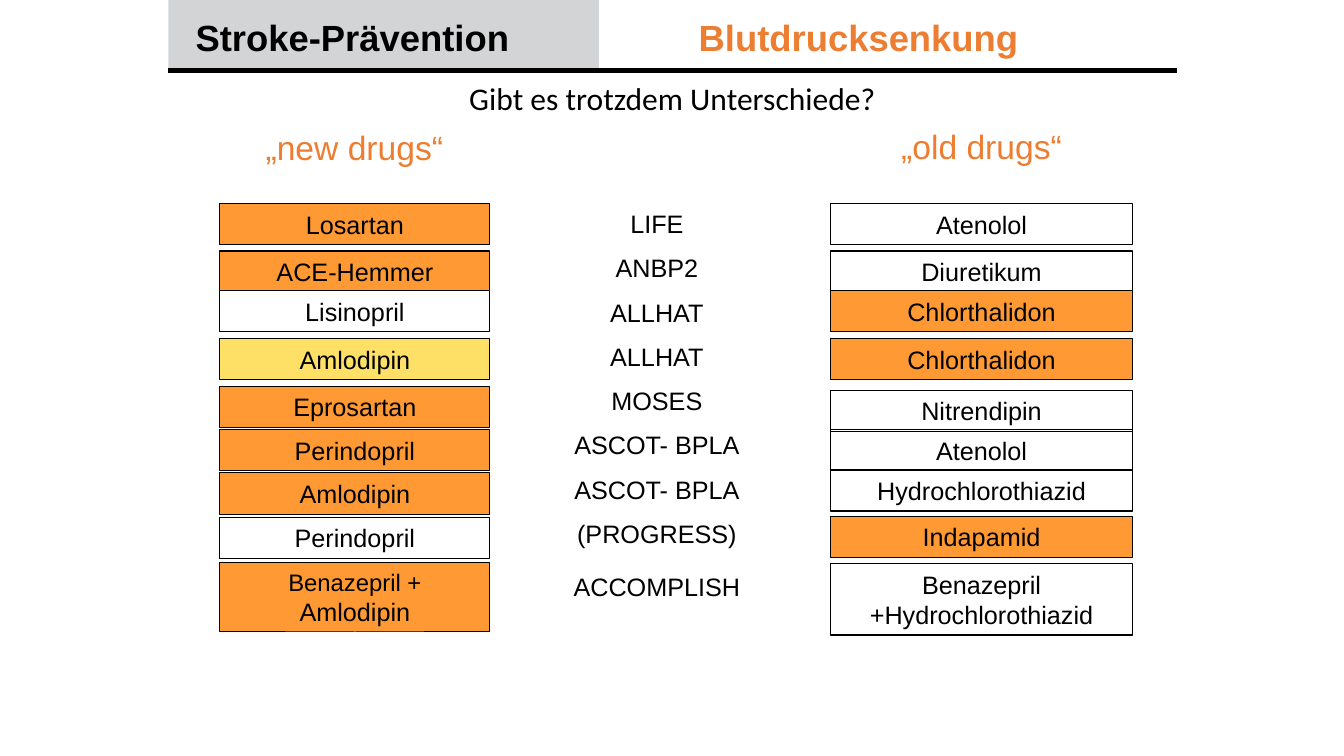
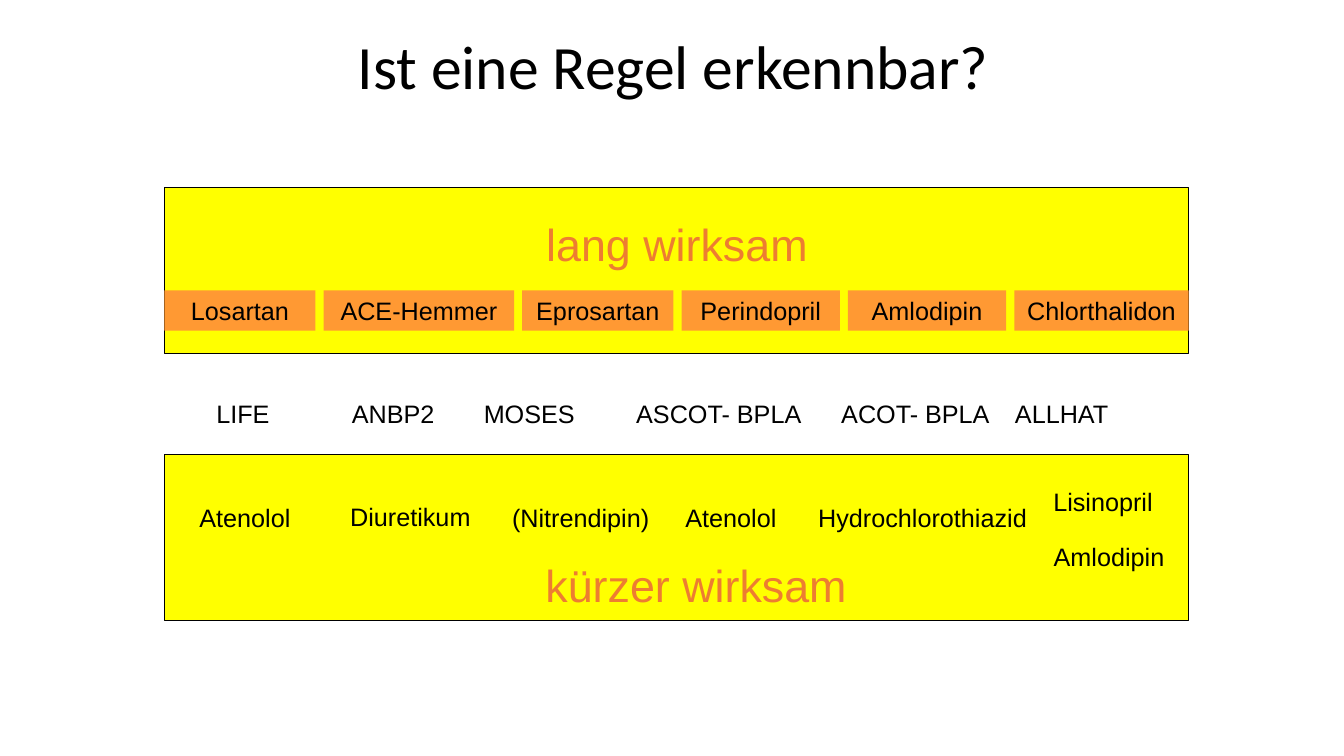
from dataclasses import dataclass
from lxml.etree import SubElement
from pptx import Presentation
from pptx.dml.color import RGBColor
from pptx.enum.shapes import MSO_CONNECTOR, MSO_SHAPE
from pptx.enum.text import MSO_ANCHOR, MSO_AUTO_SIZE, PP_ALIGN
from pptx.oxml.ns import qn
from pptx.util import Inches, Pt


@dataclass(frozen=True)
class Theme:
    black: RGBColor = RGBColor.from_string("000000")
    white: RGBColor = RGBColor.from_string("FFFFFF")
    accent: RGBColor = RGBColor.from_string("ED7D31")
    orange: RGBColor = RGBColor.from_string("FF9933")
    pale: RGBColor = RGBColor.from_string("FFE066")
    yellow: RGBColor = RGBColor.from_string("FFFF00")
    grey: RGBColor = RGBColor.from_string("D3D4D5")
    title_font: str = "Calibri"
    body_font: str = "Arial"
    body: float = 18
    tight: float = 17
    subtitle: float = 22.5
    group: float = 24
    header: float = 26
    band: float = 32
    title: float = 44


T = Theme()


def add_title(s, text, x, y, w, h, size):
    sp = s.shapes.title
    sp.left, sp.top, sp.width, sp.height = map(Inches, (x, y, w, h))
    tf = sp.text_frame
    tf.text = text
    tf.auto_size = MSO_AUTO_SIZE.NONE
    tf.vertical_anchor = MSO_ANCHOR.MIDDLE
    p = tf.paragraphs[0]
    p.alignment = PP_ALIGN.CENTER
    p.line_spacing = 0.9
    f = p.runs[0].font
    f.name, f.size, f.color.rgb = T.title_font, Pt(size), T.black


def add_box(s, text, x, y, w, h, fill=None, line=False, size=T.body, color=T.black):
    area = [Inches(v) for v in (x, y, w, h)]
    if fill or line:
        sp = s.shapes.add_shape(MSO_SHAPE.RECTANGLE, *area)
        sp.shadow.inherit = False
        if fill:
            sp.fill.solid()
            sp.fill.fore_color.rgb = fill
        else:
            sp.fill.background()
        if line:
            sp.line.color.rgb = T.black
            sp.line.width = Pt(0.75)
        else:
            sp.line.fill.background()
    else:
        sp = s.shapes.add_textbox(*area)
    tf = sp.text_frame
    tf.text = text
    tf.word_wrap = True
    tf.vertical_anchor = MSO_ANCHOR.MIDDLE
    for p in tf.paragraphs:
        p.alignment = PP_ALIGN.CENTER
        for r in p.runs:
            r.font.name, r.font.size, r.font.color.rgb = T.body_font, Pt(size), color
    return sp


prs = Presentation()
prs.slide_width, prs.slide_height = Inches(13.33), Inches(7.5)
layout = prs.slide_layouts.get_by_name("Title Only")

s = prs.slides.add_slide(layout)
add_title(s, "Gibt es trotzdem Unterschiede?", 2.17, 0.86, 9, 0.27, T.subtitle)

add_box(s, "", 1.67, 0, 4.27, 0.7, T.grey)
for text, x, color in [("Stroke-Prävention", 1.94, T.black), ("Blutdrucksenkung", 6.93, T.accent)]:
    sp = add_box(s, text, x, 0.14, 4, 0.45, size=T.header, color=color)
    tf = sp.text_frame
    tf.margin_left = tf.margin_right = tf.margin_top = tf.margin_bottom = 0
    p = tf.paragraphs[0]
    p.alignment = PP_ALIGN.LEFT
    p.runs[0].font.bold = True

rule = s.shapes.add_connector(MSO_CONNECTOR.STRAIGHT, Inches(1.67), Inches(0.7), Inches(11.67), Inches(0.7))
rule.line.color.rgb = T.black
rule.line.width = Pt(3)
SubElement(rule._element.spPr, qn("a:effectLst"))

add_box(s, "„new drugs“", 2.1, 1.21, 2.83, 0.5, size=T.group, color=T.accent)
add_box(s, "„old drugs“", 8.32, 1.2, 2.83, 0.5, size=T.group, color=T.accent)

new_drugs = [
    ("Losartan", 2.02, T.orange),
    ("ACE-Hemmer", 2.49, T.orange),
    ("Lisinopril", 2.88, T.white),
    ("Amlodipin", 3.36, T.pale),
    ("Eprosartan", 3.83, T.orange),
    ("Perindopril", 4.26, T.orange),
    ("Amlodipin", 4.69, T.orange),
    ("Perindopril", 5.13, T.white),
]
old_drugs = [
    ("Atenolol", 2.02, None),
    ("Diuretikum", 2.49, None),
    ("Chlorthalidon", 2.88, T.orange),
    ("Chlorthalidon", 3.36, T.orange),
    ("Nitrendipin", 3.87, None),
    ("Atenolol", 4.26, None),
    ("Hydrochlorothiazid", 4.66, None),
    ("Indapamid", 5.12, T.orange),
]
for drugs, x, w in [(new_drugs, 2.18, 2.68), (old_drugs, 8.24, 2.99)]:
    for text, y, fill in drugs:
        add_box(s, text, x, y, w, 0.41, fill, True)

combo = add_box(s, "Benazepril + ", 2.18, 5.58, 2.68, 0.69, T.orange, True, T.tight)
r = combo.text_frame.paragraphs[0].add_run()
r.text = "Amlodipin"
r.font.name, r.font.size, r.font.color.rgb = T.body_font, Pt(T.body), T.black
add_box(s, "Benazepril +Hydrochlorothiazid", 8.24, 5.59, 2.99, 0.71, None, True)

studies = ["LIFE", "ANBP2", "ALLHAT", "ALLHAT", "MOSES", "ASCOT- BPLA", "ASCOT- BPLA", "(PROGRESS)", "ACCOMPLISH"]
sp = add_box(s, "\n".join(studies), 5.02, 2.02, 2.99, 4.1)
sp.text_frame.vertical_anchor = MSO_ANCHOR.TOP
for p in sp.text_frame.paragraphs[1:]:
    p.space_before = Pt(10)
p.line_spacing = 1.3

s = prs.slides.add_slide(layout)
add_title(s, "Ist eine Regel erkennbar?", 2.18, 0.22, 9, 0.93, T.title)
for y in (1.86, 4.51):
    add_box(s, "", 1.63, y, 10.16, 1.65, T.yellow, True)
add_box(s, "lang wirksam", 4.39, 2.1, 4.65, 0.63, size=T.band, color=T.accent)
add_box(s, "kürzer wirksam", 3.99, 5.48, 5.83, 0.63, size=T.band, color=T.accent)

x = 1.63
for text, w in [
    ("Losartan", 1.5),
    ("ACE-Hemmer", 1.89),
    ("Eprosartan", 1.5),
    ("Perindopril", 1.57),
    ("Amlodipin", 1.57),
    ("Chlorthalidon", 1.73),
]:
    add_box(s, text, x, 2.88, w, 0.4, T.orange)
    x += w + 0.08

label_w = 2.6
for text, center, y in [
    ("LIFE", 2.41, 3.9),
    ("ANBP2", 3.9, 3.9),
    ("MOSES", 5.25, 3.9),
    ("ASCOT- BPLA", 7.13, 3.9),
    ("ACOT- BPLA", 9.08, 3.9),
    ("ALLHAT", 10.53, 3.9),
    ("Atenolol", 2.43, 4.93),
    ("Diuretikum", 4.07, 4.92),
    ("(Nitrendipin)", 5.76, 4.93),
    ("Atenolol", 7.25, 4.93),
    ("Hydrochlorothiazid", 9.15, 4.93),
    ("Lisinopril", 10.94, 4.77),
    ("Amlodipin", 11, 5.32),
]:
    add_box(s, text, center - label_w / 2, y, label_w, 0.4)

prs.save("out.pptx")
